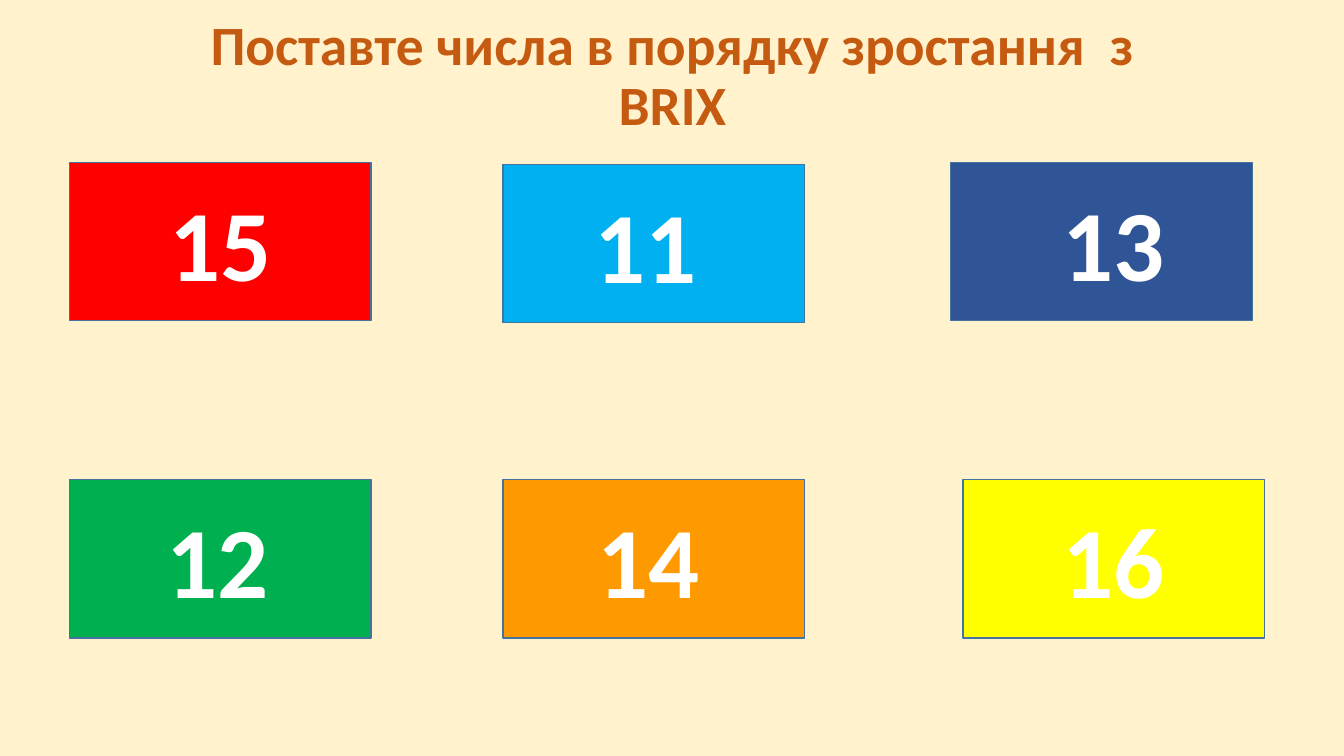
from dataclasses import dataclass

from pptx import Presentation
from pptx.dml.color import RGBColor
from pptx.enum.shapes import MSO_SHAPE
from pptx.enum.text import MSO_ANCHOR, MSO_AUTO_SIZE, PP_ALIGN
from pptx.slide import Slide
from pptx.text.text import TextFrame
from pptx.util import Emu, Pt

CREAM = RGBColor(0xFF, 0xF2, 0xCC)
RUST = RGBColor(0xC5, 0x5A, 0x11)
WHITE = RGBColor(0xFF, 0xFF, 0xFF)
OUTLINE = RGBColor(0x43, 0x73, 0x9E)
RED = RGBColor(0xFF, 0x00, 0x00)
SKY = RGBColor(0x00, 0xB0, 0xF0)
NAVY = RGBColor(0x2F, 0x55, 0x97)
GREEN = RGBColor(0x00, 0xB0, 0x50)
ORANGE = RGBColor(0xFF, 0x99, 0x00)
YELLOW = RGBColor(0xFF, 0xFF, 0x00)

EMU_PER_PX = 9144
BRICK_WIDTH, BRICK_HEIGHT = 299, 157
NUMBER_WIDTH, NUMBER_HEIGHT = 123, 131
NUMBER_DROP = 13


@dataclass(frozen=True)
class Brick:
    number: str
    color: RGBColor
    left: int
    top: int
    number_left: int


BRICKS = (
    Brick("15", RED, 69, 161, 158),
    Brick("11", SKY, 499, 163, 580),
    Brick("13", NAVY, 943, 161, 1044),
    Brick("12", GREEN, 69, 476, 155),
    Brick("14", ORANGE, 499, 476, 583),
    Brick("16", YELLOW, 955, 476, 1044),
)


def px(length: int) -> Emu:
    return Emu(length * EMU_PER_PX)


def write(frame: TextFrame, text: str, *, size: float, color: RGBColor,
          align: PP_ALIGN = PP_ALIGN.LEFT, spacing: float = 1.0,
          anchor: MSO_ANCHOR = MSO_ANCHOR.TOP, wrap: bool = False,
          fit: MSO_AUTO_SIZE = MSO_AUTO_SIZE.SHAPE_TO_FIT_TEXT) -> None:
    frame.word_wrap = wrap
    frame.auto_size = fit
    frame.vertical_anchor = anchor
    paragraph = frame.paragraphs[0]
    paragraph.alignment = align
    paragraph.line_spacing = spacing
    run = paragraph.add_run()
    run.text = text
    run.font.name = "Calibri"
    run.font.size = Pt(size)
    run.font.bold = True
    run.font.color.rgb = color


def draw_title(slide: Slide, text: str) -> None:
    title = slide.shapes.title
    title.left, title.top = px(167), px(20)
    title.width, title.height = px(1000), px(121)
    write(title.text_frame, text, size=39.6, color=RUST,
          align=PP_ALIGN.CENTER, spacing=0.9, anchor=MSO_ANCHOR.BOTTOM,
          wrap=True, fit=MSO_AUTO_SIZE.NONE)


def draw_brick(slide: Slide, brick: Brick) -> None:
    block = slide.shapes.add_shape(
        MSO_SHAPE.RECTANGLE, px(brick.left), px(brick.top),
        px(BRICK_WIDTH), px(BRICK_HEIGHT))
    block.shadow.inherit = False
    block.fill.solid()
    block.fill.fore_color.rgb = brick.color
    block.line.color.rgb = OUTLINE
    block.line.width = Pt(1)
    number = slide.shapes.add_textbox(
        px(brick.number_left), px(brick.top + NUMBER_DROP),
        px(NUMBER_WIDTH), px(NUMBER_HEIGHT))
    write(number.text_frame, brick.number, size=72, color=WHITE)


def main() -> None:
    deck = Presentation()
    deck.slide_width, deck.slide_height = px(1333), px(750)
    slide = deck.slides.add_slide(deck.slide_layouts.get_by_name("Title Only"))
    slide.background.fill.solid()
    slide.background.fill.fore_color.rgb = CREAM
    draw_title(slide, "Поставте числа в порядку зростання  з BRIX")
    for brick in BRICKS:
        draw_brick(slide, brick)
    deck.save("out.pptx")


if __name__ == "__main__":
    main()
